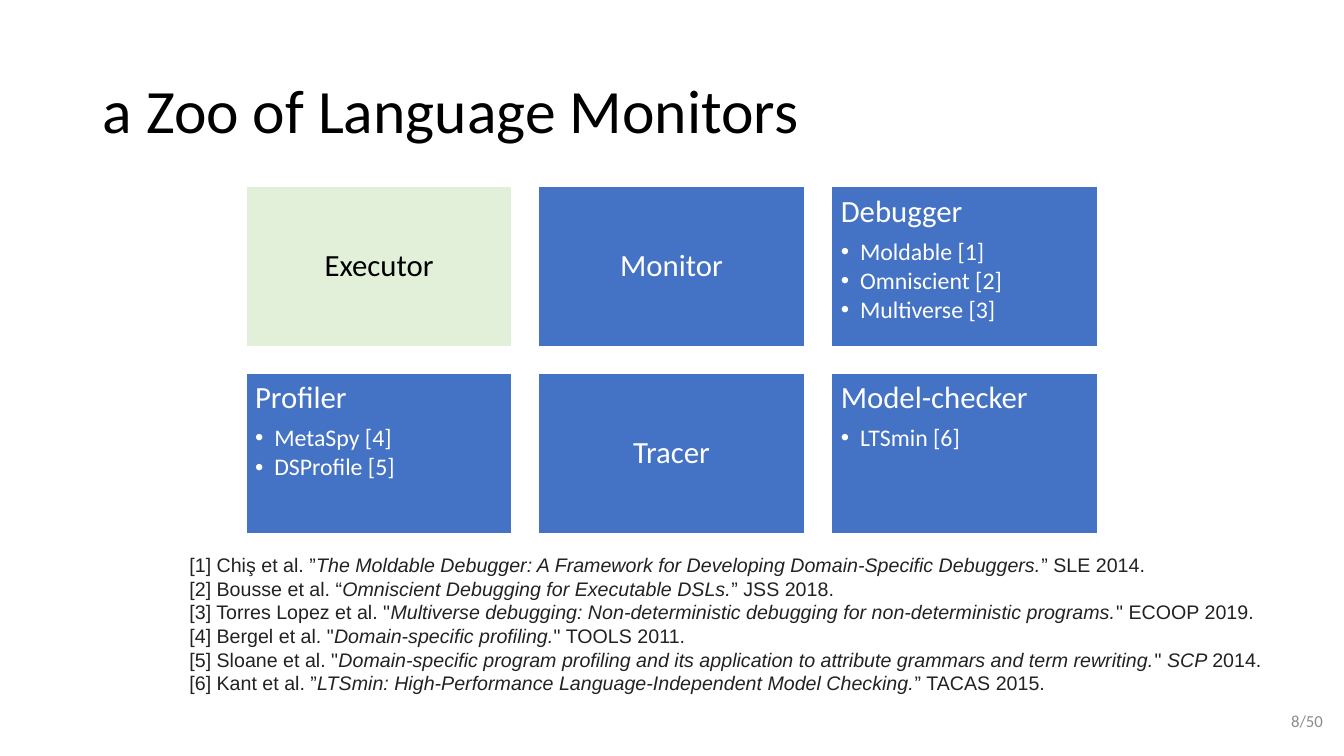
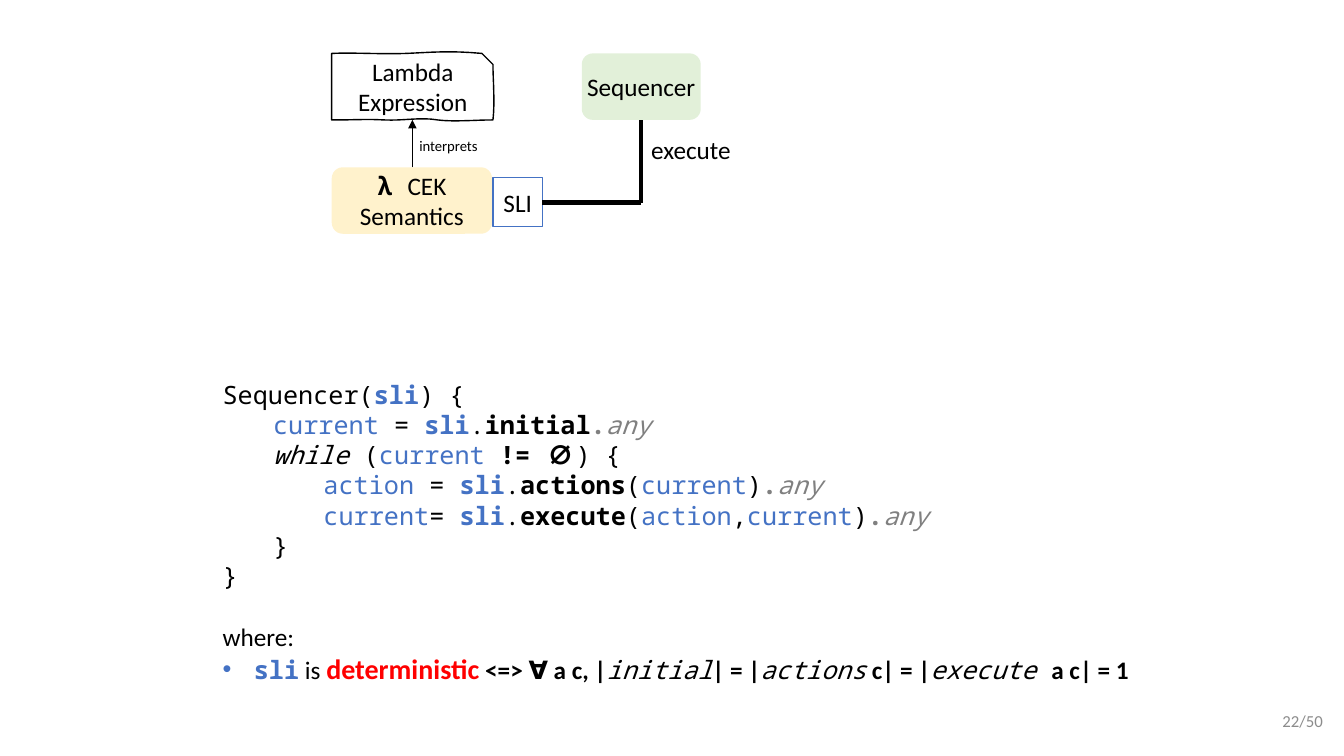
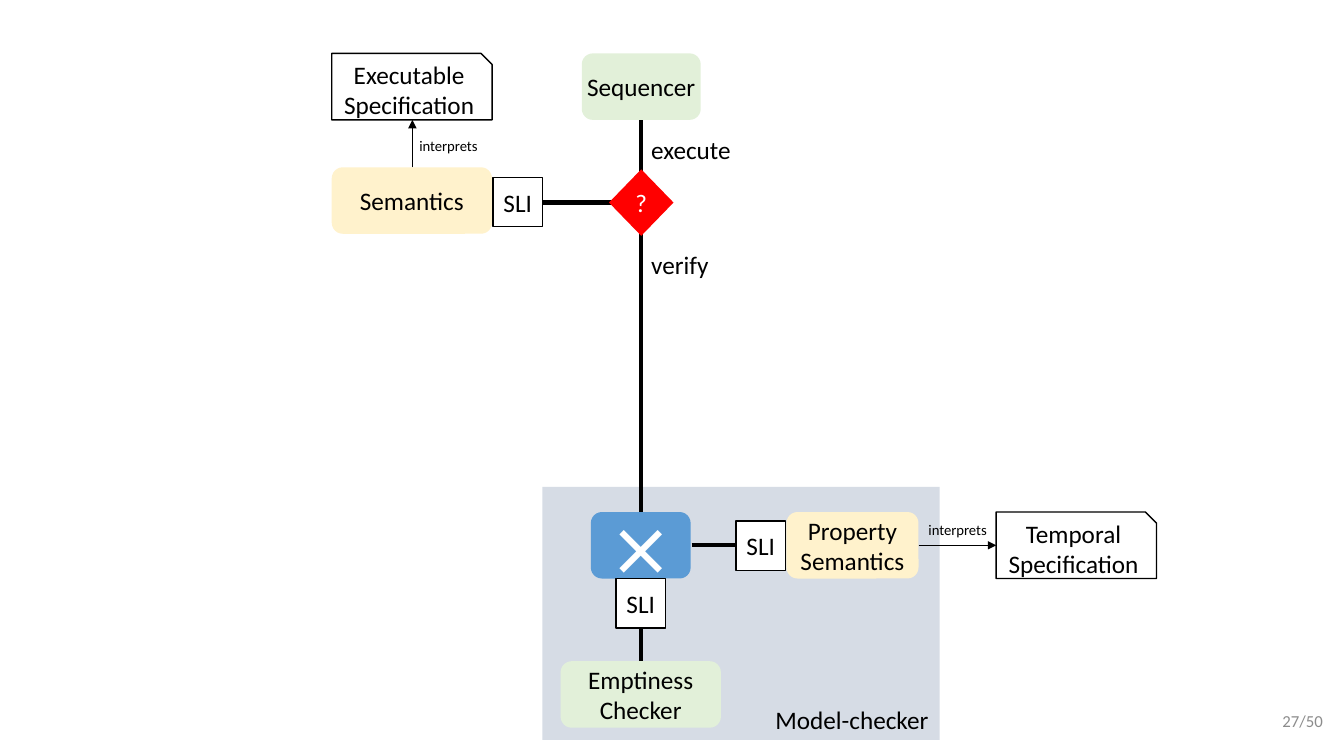
from dataclasses import dataclass, field, replace
from typing import NamedTuple

from lxml import etree
from pptx import Presentation
from pptx.dml.color import RGBColor
from pptx.enum.shapes import MSO_CONNECTOR, MSO_SHAPE
from pptx.enum.text import MSO_ANCHOR, PP_ALIGN
from pptx.oxml.ns import qn
from pptx.util import Emu, Pt

PX = 9144  # EMU per px, 100 px to the inch
LEFT, CENTER, RIGHT = PP_ALIGN.LEFT, PP_ALIGN.CENTER, PP_ALIGN.RIGHT
TOP, MIDDLE, BOTTOM = MSO_ANCHOR.TOP, MSO_ANCHOR.MIDDLE, MSO_ANCHOR.BOTTOM
RECT, ROUND = MSO_SHAPE.RECTANGLE, MSO_SHAPE.ROUNDED_RECTANGLE
SNIP, DIAMOND = MSO_SHAPE.SNIP_1_RECTANGLE, MSO_SHAPE.DIAMOND

BLACK, WHITE, RED, GRAY = "000000", "FFFFFF", "FF0000", "808080"
BLUE, SKY, GREEN, CREAM, PANEL = "4472C4", "5B9BD5", "E2F0D9", "FFF2CC", "D6DCE5"
SANS, MONO = "Calibri", "Noto Sans Mono"


class Box(NamedTuple):
    x: int
    y: int
    w: int
    h: int


class Inset(NamedTuple):
    left: int = 10
    top: int = 5
    right: int = 10
    bottom: int = 5


@dataclass(frozen=True)
class Style:
    size: float = 18
    color: str = BLACK
    font: str = SANS
    bold: bool = False
    italic: bool = False


Span = tuple[str, Style]


@dataclass
class Para:
    spans: list[Span]
    align: PP_ALIGN = LEFT
    line: float = 1.0
    before: float = 0
    after: float = 0
    bullet: int = 0
    level: int = 0
    tabs: list[int] = field(default_factory=list)


BODY = Style()
LIGHT = Style(color=WHITE)
SMALL = Style(size=10.5)
STRONG = Style(bold=True)
CODE = Style(font=MONO)
CODE_BOLD = replace(CODE, bold=True)
CODE_ITALIC = replace(CODE, italic=True)
VAR = replace(CODE, color=BLUE)
VAR_BOLD = replace(VAR, bold=True)
DOT = replace(CODE_BOLD, color=GRAY)
ANY = replace(CODE_ITALIC, color=GRAY)
REFERENCE = Style(14, "222222", "Arial")
NO_SIDES = Inset(0, 5, 0, 5)


def px(n: float) -> Emu:
    return Emu(round(n * PX))


def rgb(color: str) -> RGBColor:
    return RGBColor.from_string(color)


def centered(text: str, style: Style = BODY) -> list[Para]:
    return [Para([(text, style)], CENTER)]


def format_run(r, style: Style) -> None:
    r.font.name, r.font.size = style.font, Pt(style.size)
    r.font.bold, r.font.italic = style.bold, style.italic
    r.font.color.rgb = rgb(style.color)


def write_para(p, para: Para) -> None:
    p.alignment, p.line_spacing, p.level = para.align, para.line, para.level
    p.space_before, p.space_after = Pt(para.before), Pt(para.after)
    props = p._p.get_or_add_pPr()
    if para.bullet:
        props.set("marL", str(px(para.bullet)))
        props.set("indent", str(px(-para.bullet)))
        etree.SubElement(props, qn("a:buFont"), typeface="Arial")
        etree.SubElement(props, qn("a:buChar"), char="•")
    if para.tabs:
        stops = etree.SubElement(props, qn("a:tabLst"))
        for stop in para.tabs:
            etree.SubElement(stops, qn("a:tab"), pos=str(px(stop)), algn="l")
    for text, style in para.spans:
        for i, piece in enumerate(text.split("\n")):
            if i:
                p.add_line_break()
            r = p.add_run()
            r.text = piece
            format_run(r, style)


def write(sp, paras: list[Para], anchor: MSO_ANCHOR = MIDDLE,
          inset: Inset = Inset(), wrap: bool = True) -> None:
    tf = sp.text_frame
    tf.word_wrap, tf.vertical_anchor = wrap, anchor
    tf.margin_left, tf.margin_top = px(inset.left), px(inset.top)
    tf.margin_right, tf.margin_bottom = px(inset.right), px(inset.bottom)
    for i, para in enumerate(paras):
        write_para(tf.paragraphs[0] if i == 0 else tf.add_paragraph(), para)


def paint(sp, fill: str, line: str = "") -> None:
    sp.shadow.inherit = False
    sp.fill.solid()
    sp.fill.fore_color.rgb = rgb(fill)
    if line:
        sp.line.color.rgb = rgb(line)
        sp.line.width = Pt(1)
    else:
        sp.line.fill.background()


def add_box(s, kind: MSO_SHAPE, box: Box, paras: list[Para], fill: str, line: str = "",
            anchor: MSO_ANCHOR = MIDDLE, inset: Inset = Inset()) -> None:
    sp = s.shapes.add_shape(kind, *map(px, box))
    paint(sp, fill, line)
    write(sp, paras, anchor, inset)


def add_text(s, box: Box, paras: list[Para], anchor: MSO_ANCHOR = TOP,
             wrap: bool = True) -> None:
    write(s.shapes.add_textbox(*map(px, box)), paras, anchor, wrap=wrap)


def add_label(s, box: Box, text: str, style: Style = BODY) -> None:
    add_text(s, box, [Para([(text, style)])], wrap=False)


def add_line(s, x1: int, y1: int, x2: int, y2: int,
             width: float = 3, arrow: bool = False) -> None:
    c = s.shapes.add_connector(MSO_CONNECTOR.STRAIGHT, px(x1), px(y1), px(x2), px(y2))
    c.line.color.rgb = rgb(BLACK)
    c.line.width = Pt(width)
    if arrow:
        etree.SubElement(c.line._get_or_add_ln(), qn("a:tailEnd"), type="triangle")
    etree.SubElement(c._element.spPr, qn("a:effectLst"))


def add_slide(prs, page: int):
    """Add a blank slide carrying its page number."""
    s = prs.slides.add_slide(prs.slide_layouts[6])
    number = Para([(f"{page}/50", Style(12, "8C8C8C"))], RIGHT)
    add_text(s, Box(1253, 695, 69, 40), [number], MIDDLE)
    return s


# Monitors

class Tile(NamedTuple):
    name: str
    items: tuple[str, ...] = ()
    fill: str = BLUE
    color: str = WHITE


TILES = [
    Tile("Executor", fill=GREEN, color=BLACK),
    Tile("Monitor"),
    Tile("Debugger", ("Moldable [1]", "Omniscient [2]", "Multiverse [3]")),
    Tile("Profiler", ("MetaSpy [4]", "DSProfile [5]")),
    Tile("Tracer"),
    Tile("Model-checker", ("LTSmin [6]",)),
]

# Asterisks enclose italic text
REFERENCES = [
    "[1] Chiş et al. ”*The Moldable Debugger: A Framework for Developing "
    "Domain-Specific Debuggers.*” SLE 2014.",
    "[2] Bousse et al. “*Omniscient Debugging for Executable DSLs.*” JSS 2018.",
    "[3] Torres Lopez et al. \"*Multiverse debugging: Non-deterministic debugging "
    "for non-deterministic programs.*\" ECOOP 2019.",
    "[4] Bergel et al. \"*Domain-specific profiling.*\" TOOLS 2011.",
    "[5] Sloane et al. \"*Domain-specific program profiling and its application to "
    "attribute grammars and term rewriting.*\" *SCP *2014.",
    "[6] Kant et al. ”*LTSmin: High-Performance Language-Independent Model "
    "Checking.*” TACAS 2015.",
]


def add_tile(s, box: Box, tile: Tile) -> None:
    align, anchor = (LEFT, TOP) if tile.items else (CENTER, MIDDLE)
    paras = [Para([(tile.name, Style(22, tile.color))], align, 0.9, after=7.7)]
    paras += [Para([(item, Style(17, tile.color))], line=0.9, after=2.55, bullet=19, level=1)
              for item in tile.items]
    add_box(s, RECT, box, paras, tile.fill, WHITE, anchor, Inset(9, 9, 9, 9))


def reference(text: str) -> Para:
    return Para([(part, replace(REFERENCE, italic=i % 2 == 1))
                 for i, part in enumerate(text.split("*"))])


def monitors_slide(prs) -> None:
    s = add_slide(prs, 8)
    title = Para([("a Zoo of Language Monitors", Style(44))], line=0.9)
    add_text(s, Box(92, 40, 1150, 145), [title], MIDDLE)
    for i, tile in enumerate(TILES):
        row, col = divmod(i, 3)
        add_tile(s, Box(244 + col * 581 // 2, 185 + row * 185, 264, 159), tile)
    add_text(s, Box(178, 544, 1088, 151), [reference(t) for t in REFERENCES], wrap=False)


# Diagrams

SPEC_BOX = Box(329, 53, 159, 66)
AXIS, BUS = 636, 201  # x of the vertical link, y of the horizontal one

SKETCH_START = (329, 53)
SKETCH_CURVES = [
    ((352, 52), (379, 54), (403, 53)), ((428, 52), (445, 50), (478, 53)),
    ((482, 57), (484, 59), (489, 64)), ((489, 80), (491, 100), (489, 119)),
    ((472, 119), (450, 121), (434, 119)), ((417, 116), (400, 120), (381, 119)),
    ((362, 118), (355, 119), (329, 119)), ((329, 105), (329, 70), (329, 53)),
]

CODE_LINES: list[list[Span]] = [
    [("Sequencer(", CODE), ("sli", VAR_BOLD), (") {", CODE)],
    [("\tcurrent", VAR), (" = ", CODE), ("sli", VAR_BOLD), (".", CODE),
     ("initial", CODE_BOLD), (".", DOT), ("any", ANY)],
    [("\t", CODE_BOLD), ("while", CODE_ITALIC), (" (", CODE), ("current ", VAR),
     ("!= ∅", CODE_BOLD), (") {", CODE)],
    [("\t\t", CODE), ("action", VAR), (" = ", CODE), ("sli", VAR_BOLD), (".", CODE),
     ("actions", CODE_BOLD), ("(", CODE), ("current", VAR), (")", CODE),
     (".", DOT), ("any", ANY)],
    [("\t\t", CODE), ("current", VAR), ("= ", CODE), ("sli", VAR_BOLD), (".", CODE),
     ("execute", CODE_BOLD), ("(", CODE), ("action", VAR), (",", CODE),
     ("current", VAR), (")", CODE), (".", DOT), ("any", ANY)],
    [("\t}", CODE)],
    [("}", CODE)],
]
DEFINITION: list[Span] = [
    ("sli", VAR_BOLD), (" is ", BODY), ("deterministic", Style(20, RED, bold=True)),
    (" ", STRONG), ("<=> ∀ a c, |", STRONG), ("initial", CODE_ITALIC), ("| = |", STRONG),
    ("actions", CODE_ITALIC), (" c| = |", STRONG), ("execute ", CODE_ITALIC),
    ("a c| = 1", STRONG),
]


def curve_points(start, curves, steps: int = 8) -> list[tuple[int, int]]:
    """Sample a chain of cubic curves, in EMU."""
    points = []
    for a, b, end in curves:
        for k in range(1, steps + 1):
            t = k / steps
            u = 1 - t
            x, y = (u**3 * p0 + 3 * u * u * t * p1 + 3 * u * t * t * p2 + t**3 * p3
                    for p0, p1, p2, p3 in zip(start, a, b, end))
            points.append((px(x), px(y)))
        start = end
    return points


def add_sketch(s, paras: list[Para]) -> None:
    """Draw the hand-drawn variant of the specification box."""
    builder = s.shapes.build_freeform(*map(px, SKETCH_START))
    builder.add_line_segments(curve_points(SKETCH_START, SKETCH_CURVES), close=True)
    sp = builder.convert_to_shape()
    paint(sp, WHITE, BLACK)
    write(sp, paras)


def add_spec(s, box: Box, text: str) -> None:
    add_box(s, SNIP, box, centered(text), WHITE, BLACK)


def add_sli(s, x: int, y: int, line: str = BLACK) -> None:
    add_box(s, RECT, Box(x, y, 49, 49), centered("SLI"), WHITE, line, inset=NO_SIDES)


def add_execution(s, semantics: list[Para], sli_line: str) -> None:
    """Draw the semantics, its interface and the sequencer that executes it."""
    add_box(s, ROUND, Box(329, 166, 159, 66), semantics, CREAM)
    add_sli(s, 489, 176, sli_line)
    add_line(s, 409, 166, 409, 119, 0.5, arrow=True)
    add_label(s, Box(406, 131, 82, 29), "interprets", SMALL)
    add_line(s, 538, BUS, AXIS, BUS)
    add_box(s, ROUND, Box(577, 53, 118, 66), centered("Sequencer"), GREEN, inset=NO_SIDES)
    add_line(s, AXIS, BUS, AXIS, 119)
    add_label(s, Box(AXIS, 128, 100, 40), "execute")


def sequencer_slide(prs) -> None:
    s = add_slide(prs, 22)
    add_sketch(s, centered("Lambda\nExpression"))
    semantics = Para([("λ ", CODE_BOLD), ("CEK\nSemantics", BODY)], CENTER)
    add_execution(s, [semantics], BLUE)
    paras = [Para(spans, tabs=[50, 100]) for spans in CODE_LINES]
    paras += [Para([("where:", BODY)], before=22), Para(DEFINITION, bullet=31)]
    add_text(s, Box(211, 371, 993, 316), paras)


def checker_slide(prs) -> None:
    s = add_slide(prs, 27)
    add_box(s, RECT, Box(538, 483, 394, 251), centered("Model-checker"), PANEL,
            anchor=BOTTOM, inset=Inset(220, 5, 0, 5))
    add_spec(s, SPEC_BOX, "Executable\nSpecification")
    add_execution(s, centered("Semantics"), BLACK)
    add_line(s, AXIS, BUS, AXIS, 508)
    add_box(s, DIAMOND, Box(604, 168, 64, 66), centered("?", LIGHT), RED)
    add_label(s, Box(AXIS, 242, 78, 40), "verify")

    add_box(s, ROUND, Box(586, 508, 99, 66), centered("⨯", Style(54, WHITE)), SKY)
    add_sli(s, 611, 574)
    add_line(s, AXIS, 623, AXIS, 656)
    add_box(s, ROUND, Box(556, 656, 159, 66), centered("Emptiness\nChecker"), GREEN)

    add_line(s, 686, 541, 730, 541)
    add_sli(s, 730, 517)
    add_box(s, ROUND, Box(780, 508, 131, 66),
            centered("Property") + centered("Semantics"), CREAM)
    add_line(s, 911, 541, 988, 541, 1, arrow=True)
    add_label(s, Box(911, 512, 82, 29), "interprets", SMALL)
    add_spec(s, Box(988, 508, 159, 66), "Temporal\nSpecification")


def main() -> None:
    prs = Presentation()
    prs.slide_width, prs.slide_height = px(1333), px(750)
    monitors_slide(prs)
    sequencer_slide(prs)
    checker_slide(prs)
    prs.save("out.pptx")


if __name__ == "__main__":
    main()
